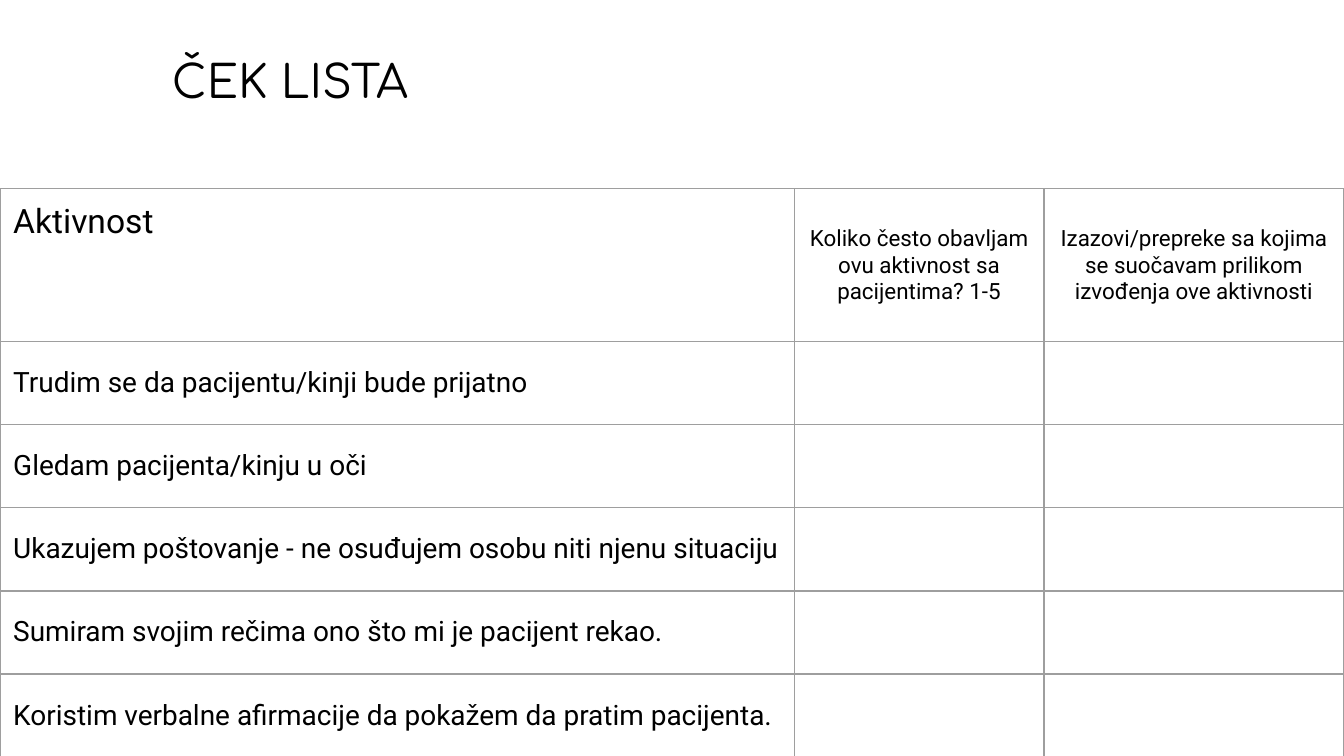
from lxml import etree
from pptx import Presentation
from pptx import util as u
from pptx.dml.color import RGBColor
from pptx.enum import text
from pptx.oxml import ns

BLACK = RGBColor(0x00, 0x00, 0x00)
WHITE = RGBColor(0xFF, 0xFF, 0xFF)
GREY = RGBColor(0x9E, 0x9E, 0x9E)

HEADINGS = [
    "Koliko često obavljam ovu aktivnost sa pacijentima? 1-5",
    "Izazovi/prepreke sa kojima se suočavam prilikom izvođenja ove aktivnosti",
]
ACTIVITIES = [
    "Trudim se da pacijentu/kinji bude prijatno",
    "Gledam pacijenta/kinju u oči",
    "Ukazujem poštovanje - ne osuđujem osobu niti njenu situaciju",
    "Sumiram svojim rečima ono što mi je pacijent rekao.",
    "Koristim verbalne afirmacije da pokažem da pratim pacijenta.",
]
COLUMN_WIDTHS = [15.01, 4.72, 5.67]
ROW_HEIGHTS = [2.89] + [1.57] * len(ACTIVITIES)


class SlideBuilder:
    title_font = "Comfortaa"
    body_font = "Roboto"
    margin = u.Cm(0.25)
    border_width = u.Pt(0.75)

    def __init__(self, slide):
        self.slide = slide
        slide.background.fill.solid()
        slide.background.fill.fore_color.rgb = WHITE

    def add_span(self, para, words, size, font):
        span = para.add_run()
        span.text = words
        span.font.size = u.Pt(size)
        span.font.name = font
        span.font.color.rgb = BLACK

    def set_margins(self, target):
        target.margin_left = target.margin_right = self.margin
        target.margin_top = target.margin_bottom = self.margin

    def title(self, words, left, top, width, height):
        box = self.slide.shapes.add_textbox(
            u.Cm(left), u.Cm(top), u.Cm(width), u.Cm(height))
        frame = box.text_frame
        frame.word_wrap = True
        self.set_margins(frame)
        self.add_span(frame.paragraphs[0], words, 24.2, self.title_font)

    def table(self, top, widths, heights):
        frame = self.slide.shapes.add_table(
            len(heights), len(widths), u.Cm(0), u.Cm(top),
            u.Cm(sum(widths)), u.Cm(sum(heights)))
        table = frame.table
        table.first_row = table.horz_banding = False
        for column, width in zip(table.columns, widths):
            column.width = u.Cm(width)
        for row, height in zip(table.rows, heights):
            row.height = u.Cm(height)
        for cell in table.iter_cells():
            self.set_margins(cell)
            self.border(cell)
            cell.fill.solid()
            cell.fill.fore_color.rgb = WHITE
        return table

    def border(self, cell):
        properties = cell._tc.get_or_add_tcPr()
        for side in ("a:lnL", "a:lnR", "a:lnT", "a:lnB"):
            line = etree.SubElement(
                properties, ns.qn(side), w=str(int(self.border_width)))
            fill = etree.SubElement(line, ns.qn("a:solidFill"))
            etree.SubElement(fill, ns.qn("a:srgbClr"), val=str(GREY))

    def cell(self, cell, words, size, align=text.PP_ALIGN.LEFT,
             anchor=text.MSO_ANCHOR.MIDDLE):
        cell.vertical_anchor = anchor
        para = cell.text_frame.paragraphs[0]
        para.alignment = align
        self.add_span(para, words, size, self.body_font)


def main():
    deck = Presentation()
    deck.slide_width = u.Cm(25.4)
    deck.slide_height = u.Cm(14.29)
    page = SlideBuilder(deck.slides.add_slide(deck.slide_layouts[6]))

    page.title("ČEK LISTA", 3, 0.76, 21.54, 1.88)
    table = page.table(3.57, COLUMN_WIDTHS, ROW_HEIGHTS)
    page.cell(table.cell(0, 0), "Aktivnost", 18, anchor=text.MSO_ANCHOR.TOP)
    for column, heading in enumerate(HEADINGS, start=1):
        page.cell(table.cell(0, column), heading, 12, text.PP_ALIGN.CENTER)
    for row, activity in enumerate(ACTIVITIES, start=1):
        page.cell(table.cell(row, 0), activity, 15)

    deck.save("out.pptx")


if __name__ == "__main__":
    main()
